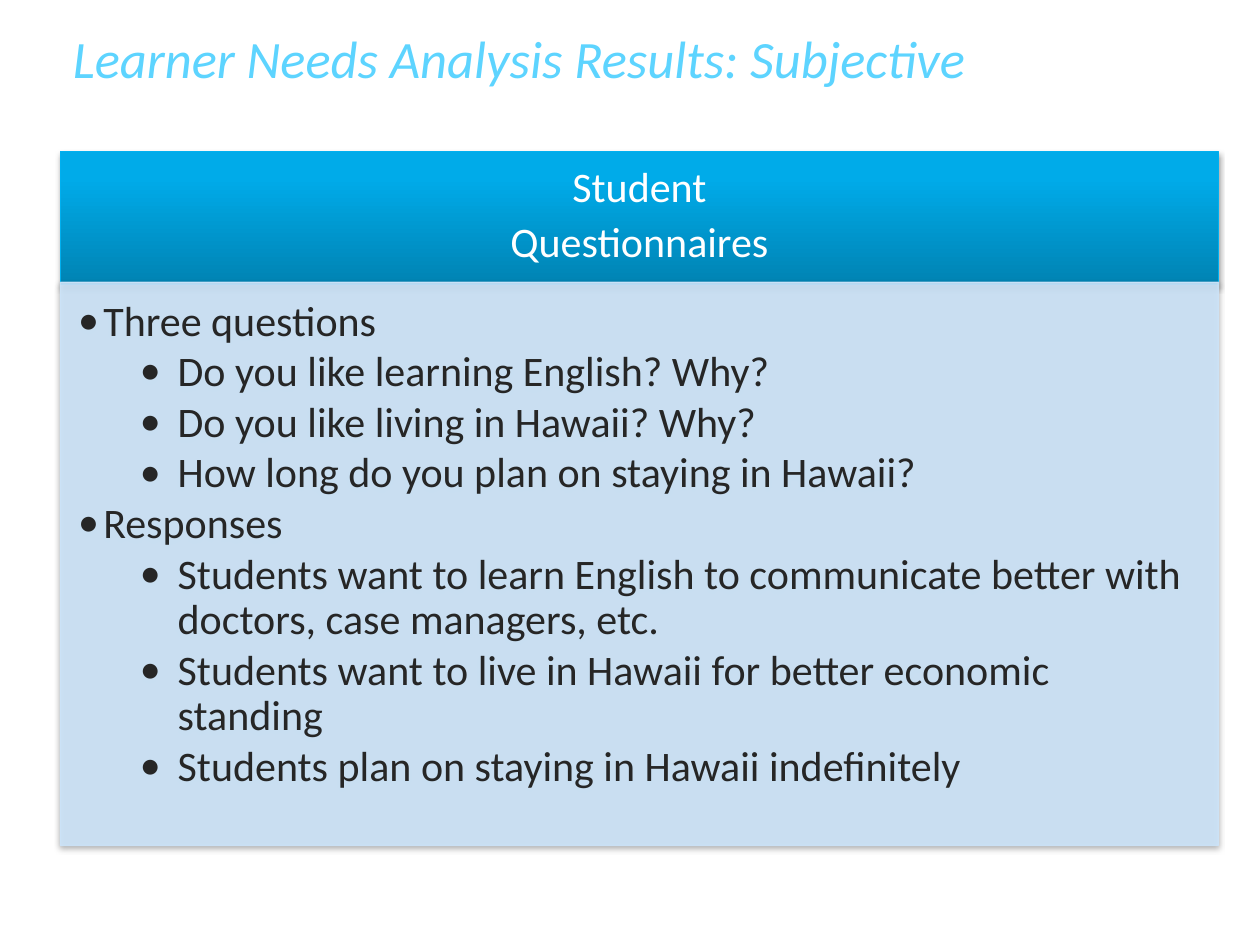
from dataclasses import dataclass

from lxml.etree import SubElement
from pptx import Presentation
from pptx.dml.color import RGBColor
from pptx.enum.shapes import MSO_SHAPE
from pptx.enum.text import MSO_ANCHOR, PP_ALIGN
from pptx.oxml import parse_xml
from pptx.oxml.ns import nsdecls, qn
from pptx.util import Inches, Pt

SKY = RGBColor(0x5D, 0xD4, 0xFF)
BLUE = RGBColor(0x00, 0xB0, 0xF0)
PALE = RGBColor(0xCC, 0xE4, 0xF9)
WHITE = RGBColor(0xFF, 0xFF, 0xFF)
DARK = RGBColor(0x26, 0x26, 0x26)
STOPS = ((0, "0083B3"), (80, "00ABE9"), (100, "00ABEA"))
LEFT, WIDTH = 0.48, 9.19
INDENTS = {1: (0.2, -0.2), 2: (0.79, -0.3)}


@dataclass
class Item:
    text: str
    level: int = 0


@dataclass
class Block:
    top: float
    height: float
    items: list[Item]
    frame: dict
    para: dict
    font: dict


def apply(target, values: dict) -> None:
    for name, value in values.items():
        setattr(target, name, value)


def margins(left: float, top: float, right: float, bottom: float) -> dict:
    sides = zip(("left", "top", "right", "bottom"), (left, top, right, bottom))
    return {f"margin_{side}": Inches(size) for side, size in sides}


def add_bullet(para, level: int) -> None:
    left, hang = INDENTS[level]
    props = para._p.get_or_add_pPr()
    props.set("marL", str(Inches(left)))
    props.set("indent", str(Inches(hang)))
    SubElement(props, qn("a:buFont"), typeface="Calibri")
    SubElement(props, qn("a:buChar"), char="•")


def write(shape, block: Block) -> None:
    frame = shape.text_frame
    apply(frame, {"word_wrap": True, **block.frame})
    for i, item in enumerate(block.items):
        para = frame.paragraphs[0] if i == 0 else frame.add_paragraph()
        apply(para, block.para)
        if item.level:
            para.level = item.level
            add_bullet(para, item.level)
        run = para.add_run()
        run.text = item.text
        apply(run.font, {"name": "Calibri", **block.font})
        run.font.color.rgb = DARK if item.level else WHITE


def add_panel(slide, block: Block, color: RGBColor):
    panel = slide.shapes.add_shape(
        MSO_SHAPE.RECTANGLE, Inches(LEFT), Inches(block.top),
        Inches(WIDTH), Inches(block.height))
    panel.fill.solid()
    panel.fill.fore_color.rgb = color
    panel.line.color.rgb = color
    panel.line.width = Pt(0.75)
    panel._element.spPr.append(parse_xml(
        f'<a:effectLst {nsdecls("a")}><a:outerShdw blurRad="{Pt(3.1)}" '
        f'dist="{Pt(1.8)}" dir="5400000" rotWithShape="0">'
        '<a:srgbClr val="000000"><a:alpha val="35000"/></a:srgbClr>'
        '</a:outerShdw></a:effectLst>'))
    write(panel, block)
    return panel


def set_blend(panel) -> None:
    props = panel._element.spPr
    stops = "".join(
        f'<a:gs pos="{pos * 1000}"><a:srgbClr val="{color}"/></a:gs>'
        for pos, color in STOPS)
    props.replace(props.find(qn("a:solidFill")), parse_xml(
        f'<a:gradFill {nsdecls("a")} rotWithShape="1"><a:gsLst>{stops}</a:gsLst>'
        '<a:lin ang="16200000" scaled="0"/></a:gradFill>'))


def set_alpha(panel, percent: int) -> None:
    for color in panel._element.spPr.findall(f'.//{qn("a:solidFill")}/{qn("a:srgbClr")}'):
        SubElement(color, qn("a:alpha"), val=str(percent * 1000))


TITLE = Block(
    0.08, 0.75, [Item("Learner Needs Analysis Results: Subjective")],
    {"vertical_anchor": MSO_ANCHOR.MIDDLE}, {},
    {"size": Pt(30), "italic": True})

HEAD = Block(
    1.2, 1.06, [Item("Student"), Item("Questionnaires")],
    {"vertical_anchor": MSO_ANCHOR.MIDDLE, **margins(0.19, 0.11, 0.19, 0.11)},
    {"alignment": PP_ALIGN.CENTER, "line_spacing": 0.8, "space_after": Pt(8)},
    {"size": Pt(24)})

BODY = Block(
    2.24, 4.47,
    [Item("Three questions", 1),
     Item("Do you like learning English? Why?", 2),
     Item("Do you like living in Hawaii? Why?", 2),
     Item("How long do you plan on staying in Hawaii?", 2),
     Item("Responses", 1),
     Item("Students want to learn English to communicate better with "
          "doctors, case managers, etc.", 2),
     Item("Students want to live in Hawaii for better economic standing", 2),
     Item("Students plan on staying in Hawaii indefinitely", 2)],
    {"vertical_anchor": MSO_ANCHOR.TOP, **margins(0.14, 0.14, 0.19, 0.21)},
    {"alignment": PP_ALIGN.LEFT, "line_spacing": 0.9, "space_after": Pt(3)},
    {"size": Pt(24)})


def main() -> None:
    deck = Presentation()
    apply(deck, {"slide_width": Inches(10), "slide_height": Inches(7.5)})
    slide = deck.slides.add_slide(deck.slide_layouts[6])

    # Title
    title = slide.shapes.add_textbox(
        Inches(LEFT), Inches(TITLE.top), Inches(WIDTH), Inches(TITLE.height))
    write(title, TITLE)
    title.text_frame.paragraphs[0].runs[0].font.color.rgb = SKY

    # Heading band
    set_blend(add_panel(slide, HEAD, BLUE))

    # Questions and responses
    set_alpha(add_panel(slide, BODY, PALE), 90)

    deck.save("out.pptx")


if __name__ == "__main__":
    main()
